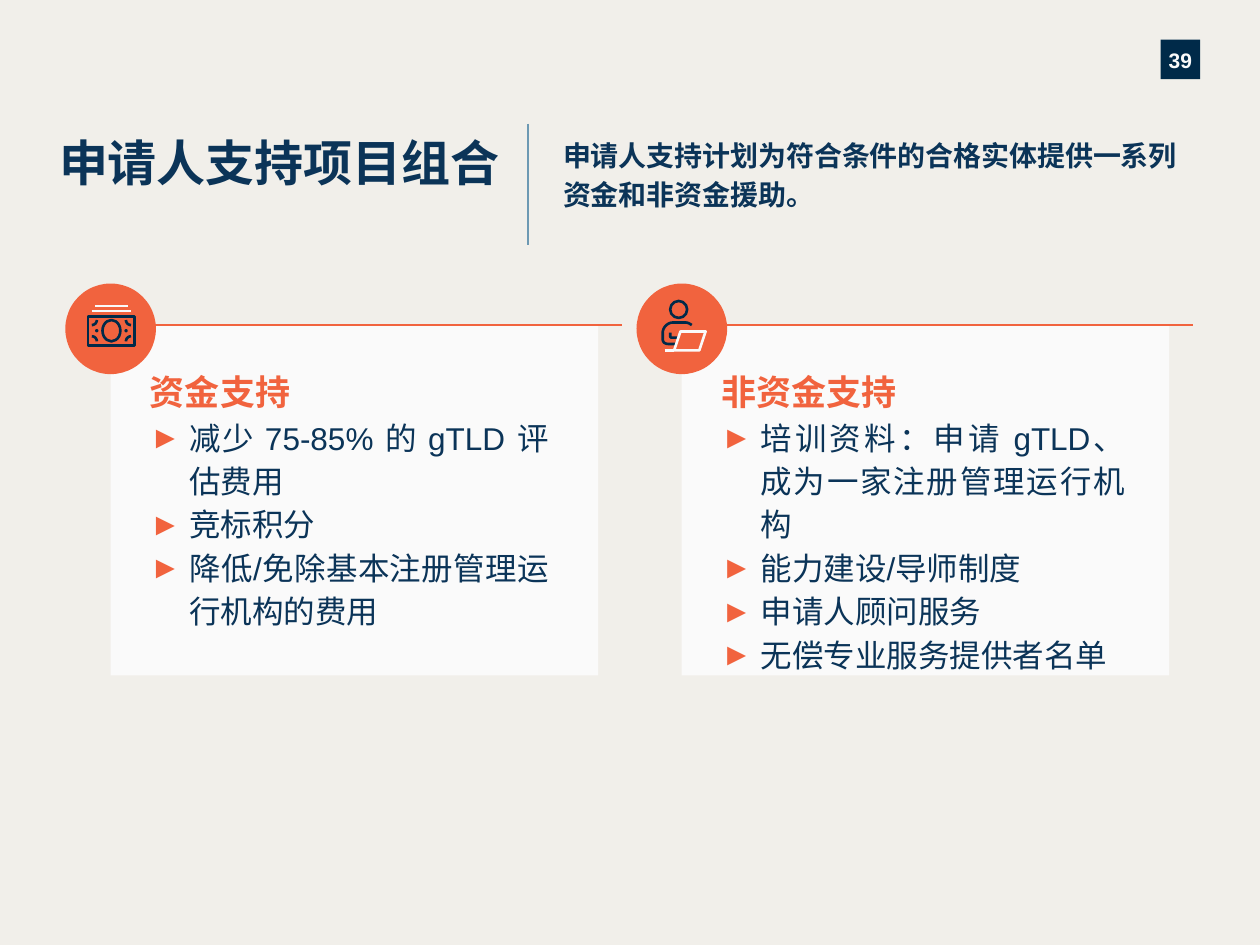
from lxml.etree import SubElement
from pptx import Presentation
from pptx.dml.color import RGBColor
from pptx.enum.shapes import MSO_CONNECTOR, MSO_SHAPE
from pptx.enum.text import MSO_ANCHOR, MSO_AUTO_SIZE, PP_ALIGN
from pptx.oxml.ns import qn
from pptx.util import Pt

PAPER = RGBColor(0xF1, 0xEF, 0xEA)
WHITE = RGBColor(0xFA, 0xFA, 0xFA)
NAVY = RGBColor(0x0B, 0x34, 0x58)
INK = RGBColor(0x00, 0x2A, 0x49)
CORAL = RGBColor(0xF1, 0x63, 0x3E)
STEEL = RGBColor(0x6D, 0x99, 0xB3)

# Content
TITLE = "申请人支持项目组合"
LEAD = "申请人支持计划为符合条件的合格实体提供一系列资金和非资金援助。"
NUMBER = "39"
CARDS = [  # left, right inset, heading, bullets
    (63.2, 28, "资金支持",
     ["减少 75-85% 的 gTLD 评估费用", "竞标积分", "降低/免除基本注册管理运行机构的费用"]),
    (389.6, 25.2, "非资金支持",
     ["培训资料：申请 gTLD、成为一家注册管理运行机构", "能力建设/导师制度",
      "申请人顾问服务", "无偿专业服务提供者名单"]),
]
TOP, WIDE, HIGH = 185.8, 278.6, 200.2
RULE, DISC, INDENT = 292.4, 51.8, 22.5

# Icon outlines: a pair is a corner, six numbers are a Bezier curve
ARM = [(387.4, 193), (383.8, 193), (383.4, 193, 383, 192.6, 383, 192.2), (383, 190.1)]
BODY = [(395.3, 185.8), (394.1, 184.9, 392.9, 184.3, 391.7, 184.3), (384.5, 184.3),
        (381.6, 184.3, 378.7, 187.2, 378.7, 190.1), (378.7, 193.7),
        (378.7, 195.8, 380.2, 196.6, 382.3, 196.6), (386.6, 196.6)]
LAPTOP = [(388.8, 189.4), (403.2, 189.4), (399.6, 200.2), (385.2, 200.2)]
NOTE = (63.7, 189)  # centre of the banknote

deck = Presentation()
deck.slide_width, deck.slide_height = Pt(720), Pt(540)
slide = deck.slides.add_slide(deck.slide_layouts[6])
slide.background.fill.solid()
slide.background.fill.fore_color.rgb = PAPER
shapes = slide.shapes


def paint(shape, fill=None, line=None):
    shape.shadow.inherit = False
    if fill is None:
        shape.fill.background()
    else:
        shape.fill.solid()
        shape.fill.fore_color.rgb = fill
    if line is None:
        shape.line.fill.background()
    else:
        shape.line.color.rgb = line
        shape.line.width = Pt(1.5)
    return shape


def add(home, kind, box, fill=None, line=None):
    return paint(home.add_shape(kind, *map(Pt, box)), fill, line)


def rule(home, ends, color, width):
    line = home.add_connector(MSO_CONNECTOR.STRAIGHT, *map(Pt, ends))
    line.line.color.rgb = color
    line.line.width = Pt(width)
    SubElement(line._element.spPr, qn("a:effectLst"))


def stroke(home, steps, color, close=False):
    dots = [steps[0]]
    for step in steps[1:]:
        if len(step) == 2:
            dots.append(step)
            continue
        (ax, ay), (bx, by, cx, cy, dx, dy) = dots[-1], step
        for t in (n / 8 for n in range(1, 9)):
            u = 1 - t
            a, b, c, d = u**3, 3 * u * u * t, 3 * u * t * t, t**3
            dots.append((a*ax + b*bx + c*cx + d*dx, a*ay + b*by + c*cy + d*dy))
    dots = [(round(x * 100), round(y * 100)) for x, y in dots]
    path = home.build_freeform(*dots[0], scale=Pt(1) / 100)
    path.add_line_segments(dots[1:], close=close)
    paint(path.convert_to_shape(), line=color)


def setup(shape, pads=(0, 0, 0, 0), anchor=MSO_ANCHOR.TOP):
    frame = shape.text_frame
    frame.word_wrap = True
    frame.vertical_anchor = anchor
    (frame.margin_left, frame.margin_top,
     frame.margin_right, frame.margin_bottom) = map(Pt, pads)
    return frame


def style(para, text, size, color, face="Arial", bold=True, space=1.15, align=None):
    para.text = text
    para.line_spacing = space
    para.alignment = align
    font = para.font
    font.size, font.name, font.bold = Pt(size), face, bold
    font.color.rgb = color


def bullet(para):
    props = para._p.get_or_add_pPr()
    props.set("marL", str(Pt(INDENT)))
    props.set("indent", str(-Pt(INDENT)))
    tint = SubElement(props, qn("a:buClr"))
    SubElement(tint, qn("a:srgbClr")).set("val", str(CORAL))
    SubElement(props, qn("a:buFont")).set("typeface", "Arial")
    SubElement(props, qn("a:buChar")).set("char", "►")
    # Default run properties follow the bullet in the schema
    props.append(props.find(qn("a:defRPr"))) if props.find(qn("a:defRPr")) is not None else None


# Page number
badge = add(shapes, MSO_SHAPE.RECTANGLE, (663.2, 22.6, 22.6, 22.6), INK)
style(setup(badge, anchor=MSO_ANCHOR.MIDDLE).paragraphs[0], NUMBER, 12, WHITE,
      space=1.08, align=PP_ALIGN.CENTER)

# Cards with their rules
for left, pad, head, items in CARDS:
    card = add(shapes, MSO_SHAPE.RECTANGLE, (left, TOP, WIDE, HIGH), WHITE)
    frame = setup(card, (22.5, 22.5, pad, 22))
    style(frame.paragraphs[0], head, 20, CORAL, align=PP_ALIGN.JUSTIFY)
    for item in items:
        para = frame.add_paragraph()
        style(para, item, 18, NAVY, bold=False, align=PP_ALIGN.JUSTIFY)
        bullet(para)
    rule(shapes, (left, TOP, left + RULE, TOP), CORAL, 1.25)

# Title, lead and divider
for box, text, size in [((33.8, 70.6, 278.6, 66.2), TITLE, 28),
                        ((321.8, 76.3, 355.7, 44.6), LEAD, 16)]:
    frame = setup(shapes.add_textbox(*map(Pt, box)))
    style(frame.paragraphs[0], text, size, NAVY, "Noto Sans")
frame.auto_size = MSO_AUTO_SIZE.SHAPE_TO_FIT_TEXT
rule(shapes, (301.7, 70.6, 301.7, 140.2), STEEL, 1.25)

# Icon discs
for left, *_ in CARDS:
    add(shapes, MSO_SHAPE.OVAL, (left - DISC / 2, 162, DISC, DISC), CORAL)

# Person with laptop
person = shapes.add_group_shape().shapes
add(person, MSO_SHAPE.OVAL, (383, 172, 9.7, 9.7), line=INK)
stroke(person, ARM, INK)
stroke(person, BODY, INK)
rule(person, (379.8, 200.2, 385.2, 200.2), WHITE, 1.5)
stroke(person, LAPTOP, WHITE, close=True)

# Banknotes
cash = shapes.add_group_shape().shapes
mx, my = NOTE
for kind, wide, high in [(MSO_SHAPE.RECTANGLE, 26.6, 16.6), (MSO_SHAPE.OVAL, 10.2, 12.2)]:
    add(cash, kind, (mx - wide / 2, my - high / 2, wide, high), line=INK)
for sx in (1, -1):
    add(cash, MSO_SHAPE.OVAL, (mx + sx * 8.4 - 0.2, my - 0.2, 0.4, 0.4), line=INK)
    for sy in (1, -1):
        x, y = mx + sx * 11.2, my + sy * 3.2
        ex, ey = mx + sx * 8.3, my + sy * 6.1
        stroke(cash, [(x, y), (x - sx * 1.6, y, ex, ey - sy * 1.6, ex, ey)], INK)
for half, y in [(11.3, 177.7), (9.4, 174.9)]:
    rule(cash, (mx - half, y, mx + half, y), WHITE, 1.5)

deck.save("out.pptx")
